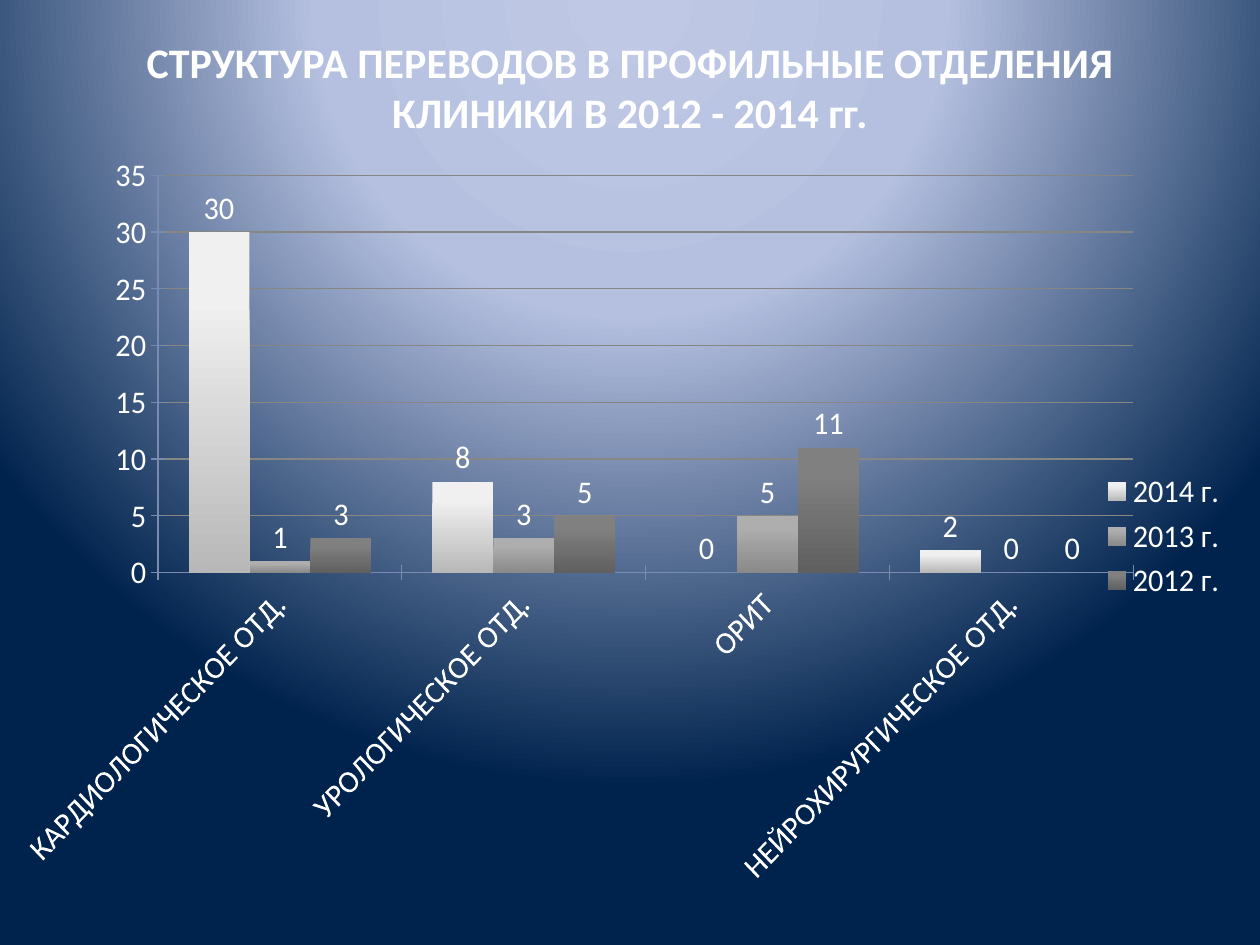
from lxml import etree
from pptx import Presentation
from pptx.chart.data import CategoryChartData
from pptx.dml.color import RGBColor
from pptx.enum.chart import XL_CHART_TYPE, XL_LABEL_POSITION, XL_LEGEND_POSITION, XL_TICK_MARK
from pptx.enum.text import MSO_ANCHOR, PP_ALIGN
from pptx.oxml import parse_xml
from pptx.oxml.ns import nsdecls, qn
from pptx.util import Inches, Pt

WHITE = RGBColor(0xFF, 0xFF, 0xFF)
GRID = RGBColor(0x88, 0x86, 0x80)
AXIS = RGBColor(0x7A, 0x8B, 0xB0)
SKY = RGBColor(0xBF, 0xC9, 0xE5)
HAZE = RGBColor(0xB5, 0xC0, 0xE0)
NAVY = RGBColor(0x00, 0x23, 0x4D)

DEPARTMENTS = ["КАРДИОЛОГИЧЕСКОЕ ОТД.", "УРОЛОГИЧЕСКОЕ ОТД.", "ОРИТ", "НЕЙРОХИРУРГИЧЕСКОЕ ОТД."]
YEARS = [
    ("2014 г.", (30, 8, 0, 2), RGBColor(0xF0, 0xF0, 0xF0), RGBColor(0xB8, 0xB8, 0xB8)),
    ("2013 г.", (1, 3, 5, 0), RGBColor(0xAE, 0xAE, 0xAE), RGBColor(0x8A, 0x8A, 0x8A)),
    ("2012 г.", (3, 5, 11, 0), RGBColor(0x80, 0x80, 0x80), RGBColor(0x60, 0x60, 0x60)),
]


def style_text(font, size):
    font.name = "Calibri"
    font.size = Pt(size)
    font.color.rgb = WHITE


def manual_layout(x, y, width, height, inner=False):
    target = '<c:layoutTarget val="inner"/>' if inner else ""
    return parse_xml(
        f'<c:layout {nsdecls("c")}><c:manualLayout>{target}'
        '<c:xMode val="edge"/><c:yMode val="edge"/>'
        f'<c:x val="{x}"/><c:y val="{y}"/><c:w val="{width}"/><c:h val="{height}"/>'
        "</c:manualLayout></c:layout>"
    )


prs = Presentation()
prs.slide_width, prs.slide_height = Inches(10), Inches(7.5)
slide = prs.slides.add_slide(prs.slide_layouts[5])

slide.background.fill.gradient()
glow = slide.element.find(".//" + qn("a:gradFill"))
for child in list(glow):
    glow.remove(child)
stops = etree.SubElement(glow, qn("a:gsLst"))
for percent, color in ((0, SKY), (40, HAZE), (100, NAVY)):
    stop = etree.SubElement(stops, qn("a:gs"), pos=str(percent * 1000))
    etree.SubElement(stop, qn("a:srgbClr"), val=str(color))
circle = etree.SubElement(glow, qn("a:path"), path="circle")
etree.SubElement(circle, qn("a:fillToRect"), l="50000", t="-80000", r="50000", b="180000")

title = slide.shapes.title
title.left, title.top = Inches(0.5), Inches(0.3)
title.width, title.height = Inches(9), Inches(0.78)
title.text_frame.vertical_anchor = MSO_ANCHOR.MIDDLE
heading = title.text_frame.paragraphs[0]
heading.text = "СТРУКТУРА ПЕРЕВОДОВ В ПРОФИЛЬНЫЕ ОТДЕЛЕНИЯ КЛИНИКИ В 2012 - 2014 гг."
heading.alignment = PP_ALIGN.CENTER
style_text(heading.font, 24)
heading.font.bold = True

transfers = CategoryChartData()
transfers.categories = DEPARTMENTS
for year, counts, _, _ in YEARS:
    transfers.add_series(year, counts)
chart = slide.shapes.add_chart(
    XL_CHART_TYPE.COLUMN_CLUSTERED, Inches(0.17), Inches(1.17), Inches(9.67), Inches(6.17), transfers
).chart
style_text(chart.font, 18)
chart.has_title = False

columns = chart.plots[0]
columns.gap_width = 100
columns.overlap = 0
columns.vary_by_categories = False
for series, (_, _, top_color, bottom_color) in zip(columns.series, YEARS):
    fill = series.format.fill
    fill.gradient()
    fill.gradient_angle = 270
    for stop, color, position in zip(fill.gradient_stops, (top_color, bottom_color), (0.2, 1)):
        stop.color.rgb = color
        stop.position = position
    labels = series.data_labels
    labels.show_value = True
    labels.position = XL_LABEL_POSITION.OUTSIDE_END
    style_text(labels.font, 18)

for axis in (chart.category_axis, chart.value_axis):
    axis.major_tick_mark = XL_TICK_MARK.CROSS
    axis.minor_tick_mark = XL_TICK_MARK.NONE
    axis.format.line.color.rgb = AXIS
    axis.format.line.width = Pt(0.75)
    style_text(axis.tick_labels.font, 18)
chart.category_axis._element.find(qn("c:txPr")).find(qn("a:bodyPr")).set("rot", "-2700000")
counts_axis = chart.value_axis
counts_axis.minimum_scale, counts_axis.maximum_scale, counts_axis.major_unit = 0, 35, 5
counts_axis.has_major_gridlines = True
counts_axis.major_gridlines.format.line.color.rgb = GRID
counts_axis.major_gridlines.format.line.width = Pt(0.75)

chart.has_legend = True
legend = chart.legend
legend.position = XL_LEGEND_POSITION.RIGHT
legend.include_in_layout = False
style_text(legend.font, 18)
for old in legend._element.findall(qn("c:layout")):
    legend._element.remove(old)
legend._element.find(qn("c:legendPos")).addnext(manual_layout(0.88, 0.41, 0.11, 0.18))

plot_area = chart._chartSpace.find(".//" + qn("c:plotArea"))
for old in plot_area.findall(qn("c:layout")):
    plot_area.remove(old)
plot_area.insert(0, manual_layout(0.076, 0.036, 0.833, 0.511, inner=True))

prs.save("out.pptx")
